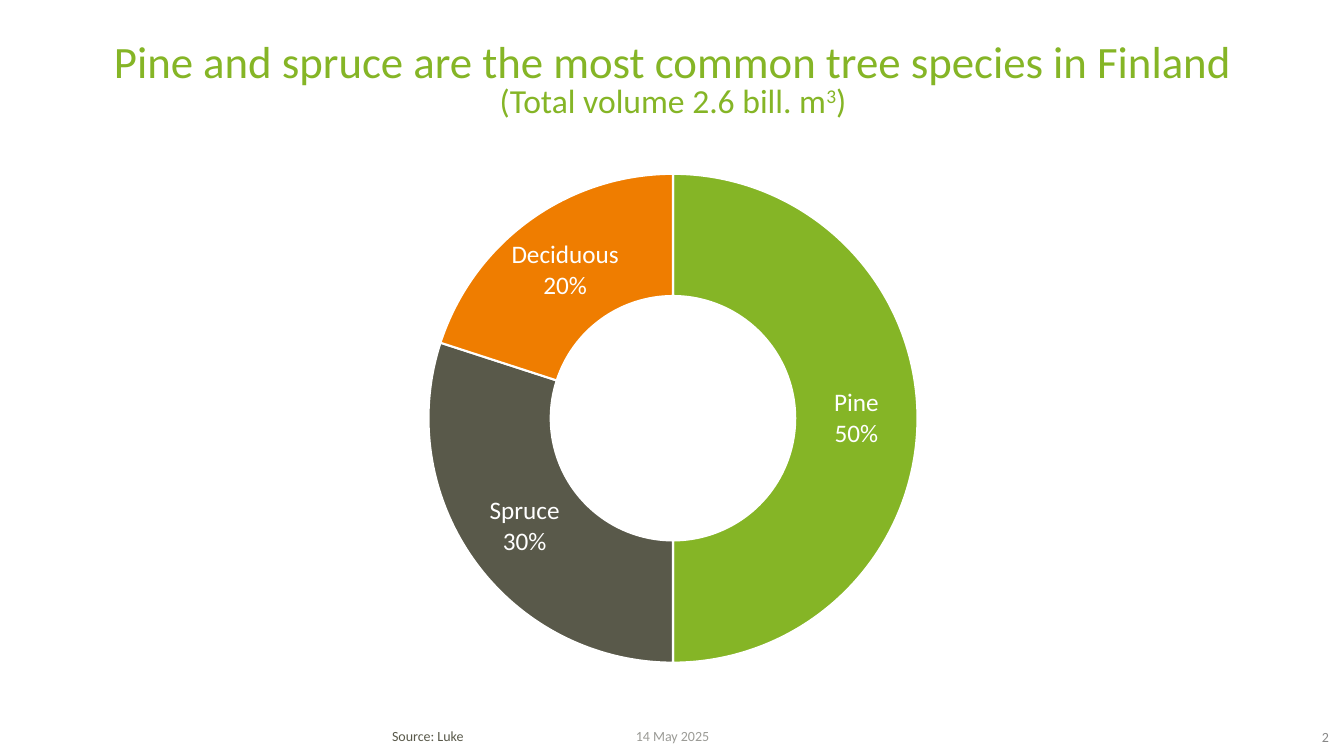
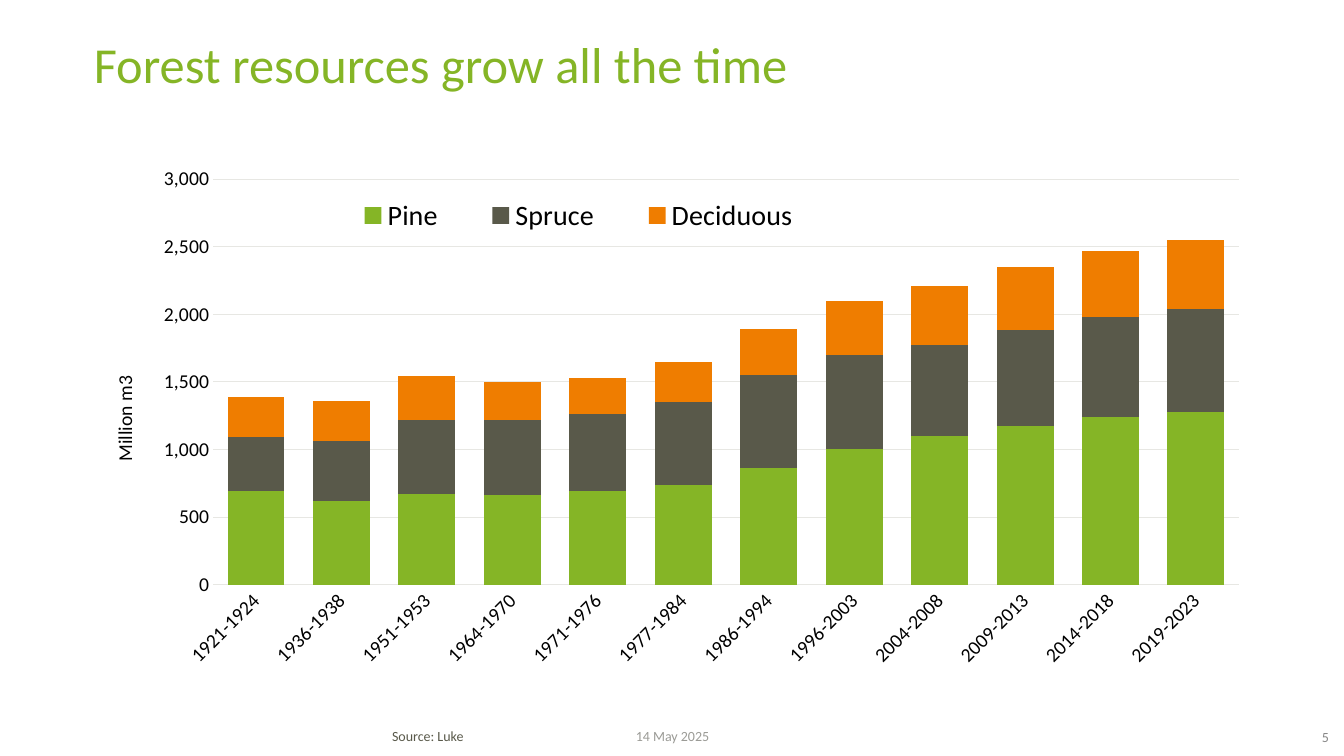
from dataclasses import dataclass
from typing import Any

from lxml import etree
from pptx import Presentation
from pptx.chart.data import CategoryChartData
from pptx.dml.color import RGBColor
from pptx.enum.chart import XL_CHART_TYPE, XL_LEGEND_POSITION, XL_TICK_MARK
from pptx.enum.text import MSO_ANCHOR, PP_ALIGN
from pptx.oxml.ns import qn
from pptx.util import Inches, Pt

DOUGHNUT = XL_CHART_TYPE.DOUGHNUT
COLUMN_STACKED = XL_CHART_TYPE.COLUMN_STACKED
LEGEND_TOP = XL_LEGEND_POSITION.TOP
NO_TICK = XL_TICK_MARK.NONE
LEFT, CENTER, RIGHT = PP_ALIGN.LEFT, PP_ALIGN.CENTER, PP_ALIGN.RIGHT
TOP, MIDDLE = MSO_ANCHOR.TOP, MSO_ANCHOR.MIDDLE

FONT = "Calibri"
COLORS = {
    "pine": "85B526",
    "spruce": "59594A",
    "deciduous": "EF7D00",
    "title": "85B526",
    "source": "59594A",
    "date": "9B9B96",
    "number": "878787",
    "grid": "E7E7E3",
    "axis": "000000",
    "label": "FFFFFF",
}
SPECIES = ("Pine", "Spruce", "Deciduous")
SHARES = (50, 30, 20)
PERIODS = (
    "1921-1924", "1936-1938", "1951-1953", "1964-1970", "1971-1976", "1977-1984",
    "1986-1994", "1996-2003", "2004-2008", "2009-2013", "2014-2018", "2019-2023",
)
VOLUMES = {
    "Pine": (690, 620, 670, 660, 690, 740, 860, 1000, 1100, 1170, 1240, 1280),
    "Spruce": (400, 440, 550, 560, 570, 610, 690, 700, 670, 710, 740, 760),
    "Deciduous": (300, 300, 320, 280, 270, 300, 340, 400, 440, 470, 490, 510),
}


@dataclass(frozen=True)
class Box:
    left: float
    top: float
    width: float
    height: float

    def lengths(self) -> tuple:
        return tuple(Inches(value) for value in (self.left, self.top, self.width, self.height))


@dataclass(frozen=True)
class TitleRun:
    text: str
    size: int
    baseline: int = 0


@dataclass(frozen=True)
class FooterText:
    text: str
    box: Box
    color: str
    alignment: Any
    anchor: Any = MIDDLE
    tight: bool = False


TITLE_BOX = Box(0.83, 0.39, 11.69, 0.98)
CHART_BOX = Box(0.83, 1.57, 11.69, 5.16)


def rgb(name: str) -> RGBColor:
    return RGBColor.from_string(COLORS[name])


def set_attributes(target: Any, values: dict) -> None:
    for name, value in values.items():
        setattr(target, name, value)


def format_font(font: Any, size: int, color: str) -> None:
    set_attributes(font, {"name": FONT, "size": Pt(size), "bold": False})
    font.color.rgb = rgb(color)


def paint(fill: Any, color: str) -> None:
    fill.solid()
    fill.fore_color.rgb = rgb(color)


def format_line(line: Any, color: str) -> None:
    line.color.rgb = rgb(color)
    line.width = Pt(0.75)


def add_title(slide: Any, runs: tuple[TitleRun, ...], alignment: Any) -> None:
    title = slide.shapes.title
    left, top, width, height = TITLE_BOX.lengths()
    set_attributes(title, {"left": left, "top": top, "width": width, "height": height})
    set_attributes(title.text_frame, {"vertical_anchor": TOP, "word_wrap": True})
    paragraph = title.text_frame.paragraphs[0]
    set_attributes(paragraph, {"alignment": alignment, "line_spacing": 0.8})
    for index, part in enumerate(runs):
        if index == 1:
            paragraph.add_line_break()
        run = paragraph.add_run()
        run.text = part.text
        format_font(run.font, part.size, "title")
        if part.baseline:
            run.font._element.set("baseline", str(part.baseline * 1000))


def add_footer(slide: Any, number: int) -> None:
    footers = (
        FooterText(str(number), Box(12.65, 7.24, 0.53, 0.19), "number", RIGHT, tight=True),
        FooterText("14 May 2025", Box(5.17, 7.15, 3, 0.31), "date", CENTER),
        FooterText("Source: Luke", Box(3.79, 7.17, 2.34, 0.27), "source", LEFT, TOP),
    )
    for footer in footers:
        frame = slide.shapes.add_textbox(*footer.box.lengths()).text_frame
        set_attributes(frame, {"word_wrap": True, "vertical_anchor": footer.anchor})
        if footer.tight:
            set_attributes(frame, {
                "margin_left": 0, "margin_right": 0,
                "margin_top": 0, "margin_bottom": Inches(0.04),
            })
        paragraph = frame.paragraphs[0]
        paragraph.alignment = footer.alignment
        run = paragraph.add_run()
        run.text = footer.text
        format_font(run.font, 10, footer.color)


def place(element: Any, inner: bool = False, **fractions: float) -> None:
    for old in element.findall(qn("c:layout")):
        element.remove(old)
    layout = etree.Element(qn("c:layout"))
    manual = etree.SubElement(layout, qn("c:manualLayout"))
    settings: dict[str, Any] = {"layoutTarget": "inner"} if inner else {}
    settings.update(xMode="edge", yMode="edge", **fractions)
    for name, value in settings.items():
        etree.SubElement(manual, qn(f"c:{name}")).set("val", str(value))
    overlay = element.find(qn("c:overlay"))
    if overlay is None:
        element.insert(0, layout)
    else:
        overlay.addprevious(layout)


def add_chart(slide: Any, kind: Any, categories: tuple, series: dict) -> Any:
    data = CategoryChartData(number_format="0")
    data.categories = categories
    for name, values in series.items():
        data.add_series(name, values)
    chart = slide.shapes.add_chart(kind, *CHART_BOX.lengths(), data).chart
    set_attributes(chart, {"has_title": False, "has_legend": False})
    format_font(chart.font, 10, "source")
    return chart


def add_share_chart(slide: Any) -> None:
    chart = add_chart(slide, DOUGHNUT, SPECIES, {"Series 1": SHARES})
    plot = chart.plots[0]
    plot.vary_by_categories = True
    for index, species in enumerate(SPECIES):
        point = plot.series[0].points[index]
        paint(point.format.fill, species.lower())
        point.format.line.color.rgb = rgb("label")
        point.format.line.width = Pt(1.5)
    labels = plot.series[0].data_labels
    set_attributes(labels, {
        "show_category_name": True, "show_percentage": True, "show_value": False,
        "show_legend_key": False, "number_format": "0%", "number_format_is_linked": False,
    })
    format_font(labels.font, 18, "label")
    separator = etree.Element(qn("c:separator"))
    separator.text = "\n"
    labels._element.find(qn("c:showBubbleSize")).addnext(separator)
    chart.element.xpath(".//c:holeSize")[0].set("val", "50")
    place(chart.element.xpath(".//c:plotArea")[0], inner=True, x=0.29, y=0.03, w=0.42, h=0.94)


def add_volume_chart(slide: Any) -> None:
    chart = add_chart(slide, COLUMN_STACKED, PERIODS, VOLUMES)
    plot = chart.plots[0]
    set_attributes(plot, {"gap_width": 50, "overlap": 100, "vary_by_categories": False})
    for series in plot.series:
        paint(series.format.fill, series.name.lower())

    category_axis, value_axis = chart.category_axis, chart.value_axis
    for axis in (category_axis, value_axis):
        set_attributes(axis, {"major_tick_mark": NO_TICK, "minor_tick_mark": NO_TICK})
        format_font(axis.tick_labels.font, 14, "axis")
    format_line(category_axis.format.line, "grid")
    chart.element.xpath(".//c:catAx/c:txPr/a:bodyPr")[0].set("rot", "-2700000")

    set_attributes(value_axis, {
        "minimum_scale": 0, "maximum_scale": 3000, "major_unit": 500,
        "has_major_gridlines": True, "has_title": True,
    })
    set_attributes(value_axis.tick_labels, {
        "number_format": "#,##0", "number_format_is_linked": False,
    })
    value_axis.format.line.fill.background()
    format_line(value_axis.major_gridlines.format.line, "grid")
    run = value_axis.axis_title.text_frame.paragraphs[0].add_run()
    run.text = "Million m3"
    format_font(run.font, 14, "axis")
    title = chart.element.xpath(".//c:valAx/c:title")[0]
    title.xpath(".//a:bodyPr")[0].set("rot", "-5400000")
    place(title, x=0.02, y=0.41)

    chart.has_legend = True
    set_attributes(chart.legend, {"position": LEGEND_TOP, "include_in_layout": True})
    format_font(chart.legend.font, 20, "axis")
    place(chart.element.xpath(".//c:legend")[0], x=0.2, y=0.07, w=0.44, h=0.08)
    place(chart.element.xpath(".//c:plotArea")[0], inner=True, x=0.11, y=0.04, w=0.87, h=0.78)


def add_slide(presentation: Any, number: int, runs: tuple[TitleRun, ...], alignment: Any) -> Any:
    slide = presentation.slides.add_slide(presentation.slide_layouts[5])
    add_footer(slide, number)
    add_title(slide, runs, alignment)
    return slide


def main() -> None:
    presentation = Presentation()
    presentation.slide_width = Inches(13.33)
    presentation.slide_height = Inches(7.5)
    species_title = (
        TitleRun("Pine and spruce are the most common tree species in Finland", 32),
        TitleRun("(Total volume 2.6 bill. m", 24),
        TitleRun("3", 24, 30),
        TitleRun(")", 24),
    )
    growth_title = (TitleRun("Forest resources grow all the time", 36),)
    add_share_chart(add_slide(presentation, 2, species_title, CENTER))
    add_volume_chart(add_slide(presentation, 5, growth_title, LEFT))
    presentation.save("out.pptx")


if __name__ == "__main__":
    main()
